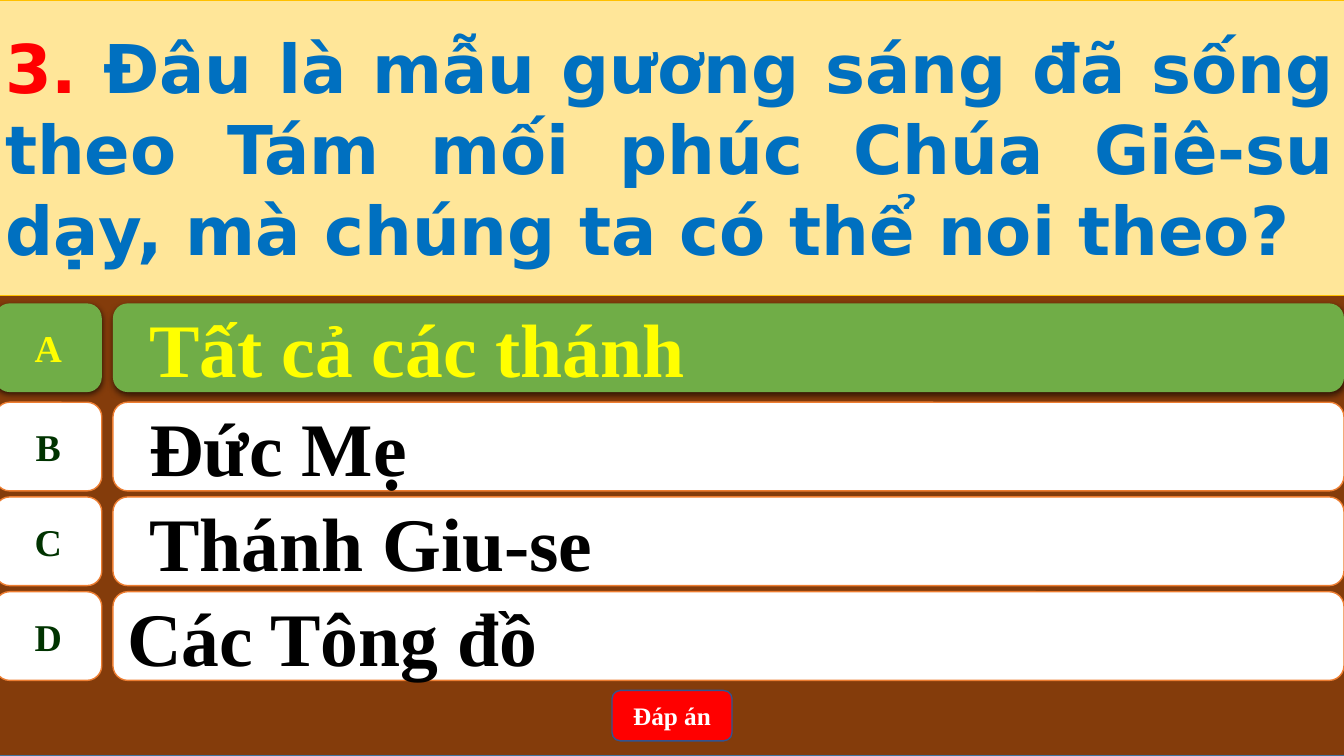
import pptx
import pptx.dml.color
import pptx.enum.shapes
import pptx.enum.text
import pptx.oxml
import pptx.oxml.ns
import pptx.util
from pptx.util import Inches

RGBColor = pptx.dml.color.RGBColor
SHAPE = pptx.enum.shapes.MSO_SHAPE
ALIGN = pptx.enum.text.PP_ALIGN

BROWN = RGBColor(0x84, 0x3C, 0x0B)
STEEL = RGBColor(0x43, 0x73, 0x9E)
NAVY = RGBColor(0x32, 0x54, 0x91)
CREAM = RGBColor(0xFF, 0xE6, 0x99)
GOLD = RGBColor(0xFF, 0xC0, 0x00)
ORANGE = RGBColor(0xED, 0x7D, 0x31)
GREEN = RGBColor(0x70, 0xAD, 0x47)
DARK_GREEN = RGBColor(0x00, 0x33, 0x00)
YELLOW = RGBColor(0xFF, 0xFF, 0x00)
BLUE = RGBColor(0x00, 0x70, 0xC0)
RED = RGBColor(0xFF, 0x00, 0x00)
WHITE = RGBColor(0xFF, 0xFF, 0xFF)
BLACK = RGBColor(0x00, 0x00, 0x00)

SERIF = "Times New Roman"
LEFT, FULL_WIDTH = -0.05, 13.39
FIRST_TOP, SECOND_TOP, ROW_STEP, ROW_HEIGHT = 3.01, 3.99, 0.94, 0.88
ANSWERS = [
    ("A", "Tất cả các thánh", True),
    ("B", "Đức Mẹ", True),
    ("C", "Thánh Giu-se", True),
    ("D", "Các Tông đồ", False),
]
CORRECT = "A"


def paint(shape, fill, line=None, line_width=1):
    shape.fill.solid()
    shape.fill.fore_color.rgb = fill
    if line is None:
        shape.line.fill.background()
    else:
        shape.line.color.rgb = line
        shape.line.width = pptx.util.Pt(line_width)


def add_box(shapes, kind, box, fill, line=None):
    shape = shapes.add_shape(kind, *map(Inches, box))
    shape.shadow.inherit = False
    paint(shape, fill, line)
    return shape


def write(shape, text, size, color, align, wrap=True):
    frame = shape.text_frame
    frame.word_wrap = wrap
    frame.vertical_anchor = pptx.enum.text.MSO_ANCHOR.MIDDLE
    paragraph = frame.paragraphs[0]
    paragraph.text = text
    paragraph.alignment = align
    font = paragraph.font
    font.name, font.size, font.bold = SERIF, pptx.util.Pt(size), True
    font.color.rgb = color
    return paragraph


def indent(paragraph):
    paragraph.level = 1
    properties = paragraph._p.get_or_add_pPr()
    properties.set("marL", str(Inches(0.5)))
    properties.set("indent", str(Inches(-0.28)))


def cast_shadow(shape):
    effects = shape.element.spPr.find(pptx.oxml.ns.qn("a:effectLst"))
    effects.append(pptx.oxml.parse_xml(
        f'<a:outerShdw {pptx.oxml.ns.nsdecls("a")} blurRad="57150" dist="19050"'
        ' dir="5400000" algn="ctr" rotWithShape="0">'
        '<a:srgbClr val="000000"><a:alpha val="63000"/></a:srgbClr></a:outerShdw>'))


def add_answer(slide, top, letter, answer, indented):
    correct = letter == CORRECT
    fill, line = (GREEN, None) if correct else (WHITE, ORANGE)
    shapes = slide.shapes.add_group_shape().shapes
    bar = add_box(shapes, SHAPE.ROUNDED_RECTANGLE,
                  (1.12, top, 12.21, ROW_HEIGHT), fill, line)
    paragraph = write(bar, answer, 54, YELLOW if correct else BLACK, ALIGN.LEFT)
    if indented:
        indent(paragraph)
    label = add_box(shapes, SHAPE.FLOWCHART_ALTERNATE_PROCESS,
                    (LEFT, top, 1.06, ROW_HEIGHT), fill, line)
    write(label, letter, 27, YELLOW if correct else DARK_GREEN, ALIGN.CENTER, wrap=False)
    if correct:
        cast_shadow(bar)
        cast_shadow(label)


def add_question(slide, number, question):
    title = slide.shapes.title
    slide.shapes.element.append(title.element)
    title.left, title.top = Inches(LEFT), Inches(0)
    title.width, title.height = Inches(FULL_WIDTH), Inches(2.93)
    paint(title, CREAM, GOLD, 0.5)
    frame = title.text_frame
    frame.word_wrap = True
    frame.auto_size = pptx.enum.text.MSO_AUTO_SIZE.NONE
    frame.vertical_anchor = pptx.enum.text.MSO_ANCHOR.MIDDLE
    paragraph = frame.paragraphs[0]
    paragraph.alignment = ALIGN.JUSTIFY
    font = paragraph.font
    font.name, font.size, font.bold = "DejaVu Sans", pptx.util.Pt(48), True
    for text, color in ((number, RED), (question, BLUE)):
        run = paragraph.add_run()
        run.text = text
        run.font.color.rgb = color


def main():
    presentation = pptx.Presentation()
    presentation.slide_width = Inches(13.33)
    presentation.slide_height = Inches(7.5)
    slide = presentation.slides.add_slide(presentation.slide_layouts.get_by_name("Title Only"))

    add_box(slide.shapes, SHAPE.RECTANGLE, (LEFT, 0, FULL_WIDTH, 7.5), BROWN, STEEL)
    tops = [FIRST_TOP] + [SECOND_TOP + ROW_STEP * row for row in range(3)]
    for top, answer in zip(tops, ANSWERS):
        add_answer(slide, top, *answer)
    button = add_box(slide.shapes, SHAPE.ROUNDED_RECTANGLE, (6.07, 6.85, 1.19, 0.5), RED, NAVY)
    write(button, "Đáp án", 18, WHITE, ALIGN.CENTER)
    add_question(slide, "3. ", "Đâu là mẫu gương sáng đã sống theo Tám mối phúc "
                 "Chúa Giê-su dạy, mà chúng ta có thể noi theo?")
    presentation.save("out.pptx")


if __name__ == "__main__":
    main()
